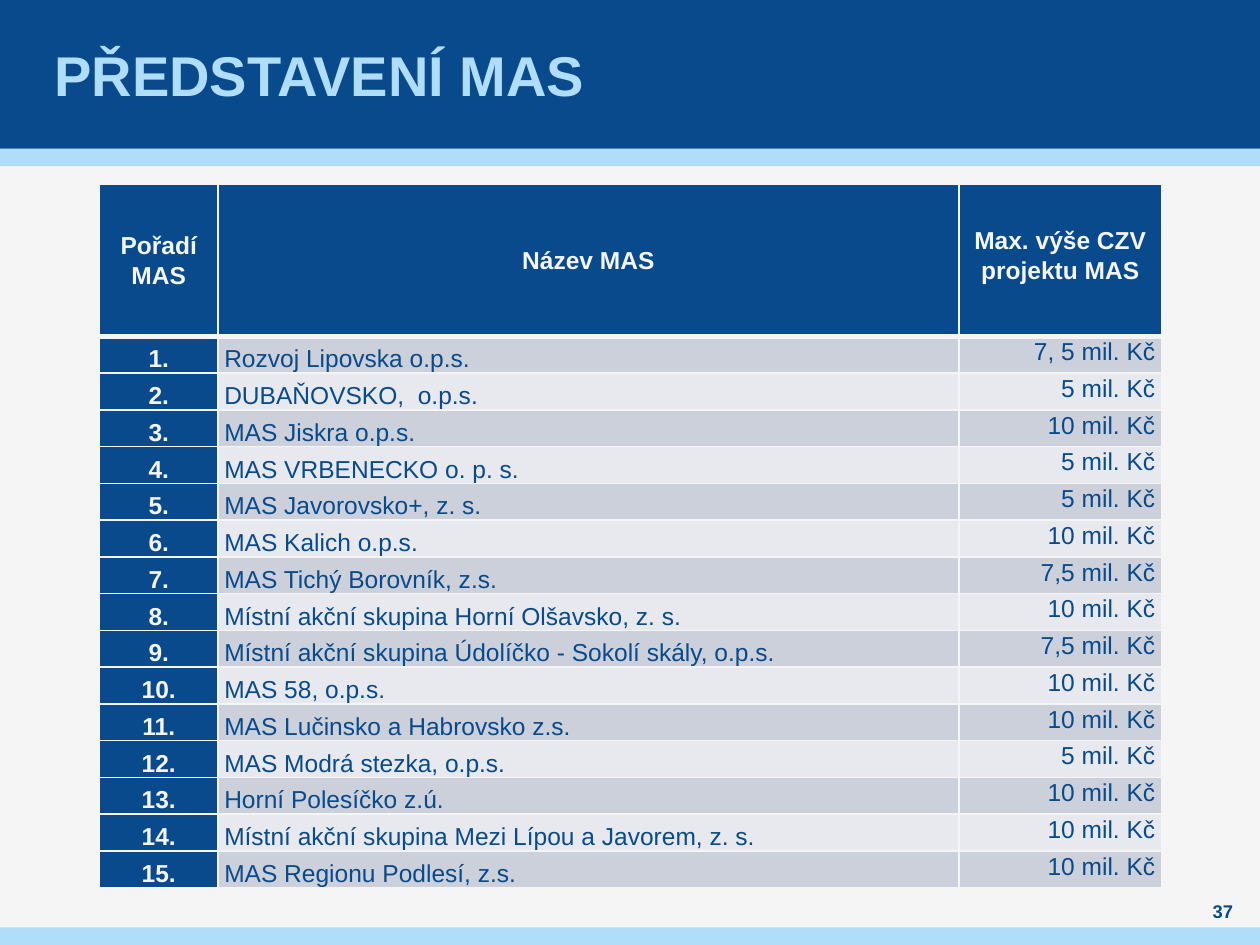
import pptx
import pptx.util
import pptx.dml.color
import pptx.enum.shapes
import pptx.enum.text
import pptx.oxml
import pptx.oxml.ns

Inches, Pt = pptx.util.Inches, pptx.util.Pt
Color = pptx.dml.color.RGBColor
Align = pptx.enum.text.PP_ALIGN
Anchor = pptx.enum.text.MSO_ANCHOR

NAVY = Color(0x08, 0x4A, 0x8B)
SKY = Color(0xAF, 0xDD, 0xFA)
PALE = Color(0xF5, 0xF5, 0xF5)
BANDS = Color(0xCC, 0xD0, 0xDA), Color(0xE7, 0xE9, 0xEE)

HEADS = "Pořadí MAS", "Název MAS", "Max. výše CZV projektu MAS"
GROUPS = [
    ("Rozvoj Lipovska o.p.s.", "7, 5 mil. Kč"),
    ("DUBAŇOVSKO,  o.p.s.", "5 mil. Kč"),
    ("MAS Jiskra o.p.s.", "10 mil. Kč"),
    ("MAS VRBENECKO o. p. s.", "5 mil. Kč"),
    ("MAS Javorovsko+, z. s.", "5 mil. Kč"),
    ("MAS Kalich o.p.s.", "10 mil. Kč"),
    ("MAS Tichý Borovník, z.s.", "7,5 mil. Kč"),
    ("Místní akční skupina Horní Olšavsko, z. s.", "10 mil. Kč"),
    ("Místní akční skupina Údolíčko - Sokolí skály, o.p.s.", "7,5 mil. Kč"),
    ("MAS 58, o.p.s.", "10 mil. Kč"),
    ("MAS Lučinsko a Habrovsko z.s.", "10 mil. Kč"),
    ("MAS Modrá stezka, o.p.s.", "5 mil. Kč"),
    ("Horní Polesíčko z.ú.", "10 mil. Kč"),
    ("Místní akční skupina Mezi Lípou a Javorem, z. s.", "10 mil. Kč"),
    ("MAS Regionu Podlesí, z.s.", "10 mil. Kč"),
]


class Deck:
    font = "Arial"

    def __init__(self, slide):
        self.slide = slide
        fill = slide.background.fill
        fill.solid()
        fill.fore_color.rgb = PALE

    def style(self, para, size, color, bold, align):
        para.alignment = align
        for run in para.runs:
            font = run.font
            font.name, font.size, font.bold = self.font, Pt(size), bold
            font.color.rgb = color

    def band(self, top, height, color):
        """Draw a bar across the full width of the slide."""
        bar = self.slide.shapes.add_shape(
            pptx.enum.shapes.MSO_SHAPE.RECTANGLE,
            0, Inches(top), Inches(10), Inches(height))
        bar.shadow.inherit = False
        bar.fill.solid()
        bar.fill.fore_color.rgb = color
        bar.line.fill.background()

    def text(self, text, box, size, color, align, inset=0):
        frame = self.slide.shapes.add_textbox(*map(Inches, box)).text_frame
        frame.word_wrap = True
        frame.vertical_anchor = Anchor.MIDDLE
        frame.margin_left = frame.margin_right = Inches(inset)
        frame.margin_top = frame.margin_bottom = 0
        frame.text = text
        self.style(frame.paragraphs[0], size, color, True, align)

    def table(self, rows, left, top, widths, heights):
        shape = self.slide.shapes.add_table(
            len(rows), len(widths), Inches(left), Inches(top),
            Inches(sum(widths)), Inches(sum(heights)))
        grid = shape.table
        grid.first_row = grid.horz_banding = False
        for col, width in zip(grid.columns, widths):
            col.width = Inches(width)
        for row, height in zip(grid.rows, heights):
            row.height = Inches(height)
        for r, row in enumerate(rows):
            for c, text in enumerate(row):
                self.cell(grid.cell(r, c), text, r, c)

    def cell(self, cell, text, r, c):
        head = r == 0
        dark = head or c == 0
        self.edge(cell, L=1, R=1, T=3 if r == 1 else 1, B=3 if head else 1)
        cell.fill.solid()
        cell.fill.fore_color.rgb = NAVY if dark else BANDS[(r - 1) % 2]
        cell.margin_left = cell.margin_right = Inches(0.05)
        cell.margin_top = Inches(0.33 if head and c == 2 else 0)
        cell.margin_bottom = 0
        if c == 2:
            cell.vertical_anchor = Anchor.TOP
        else:
            cell.vertical_anchor = Anchor.MIDDLE if head else Anchor.BOTTOM
        cell.text_frame.text = text
        para = cell.text_frame.paragraphs[0]
        para.line_spacing, para.space_after = 1.07, Pt(8)
        align = Align.CENTER if dark else (Align.LEFT, Align.RIGHT)[c - 1]
        self.style(para, 14, PALE if dark else NAVY, dark, align)

    def edge(self, cell, **sides):
        """Set cell borders by side, in points; call before filling the cell."""
        props = cell._tc.get_or_add_tcPr()
        for side, width in sides.items():
            props.append(pptx.oxml.parse_xml(
                f'<a:ln{side} {pptx.oxml.ns.nsdecls("a")} w="{Pt(width)}">'
                f'<a:solidFill><a:srgbClr val="{PALE}"/></a:solidFill>'
                f'</a:ln{side}>'))


def main():
    show = pptx.Presentation()
    show.slide_width, show.slide_height = Inches(10), Inches(7.5)
    deck = Deck(show.slides.add_slide(show.slide_layouts[6]))
    deck.band(1.18, 0.14, SKY)
    deck.band(0, 1.18, NAVY)
    deck.band(7.36, 0.14, SKY)
    deck.text("PŘEDSTAVENÍ MAS", (0.39, 0, 9.21, 1.18), 32, SKY,
              Align.LEFT, 0.04)
    deck.text("37", (9.45, 7.13, 0.51, 0.2), 10.5, NAVY, Align.CENTER)
    rows = [HEADS]
    rows += [(f"{n}.", *group) for n, group in enumerate(GROUPS, 1)]
    height = (5.59 - 1.21) / len(GROUPS)
    deck.table(rows, 0.79, 1.46, [0.94, 5.88, 1.61],
               [1.21] + [height] * len(GROUPS))
    show.save("out.pptx")


if __name__ == "__main__":
    main()
